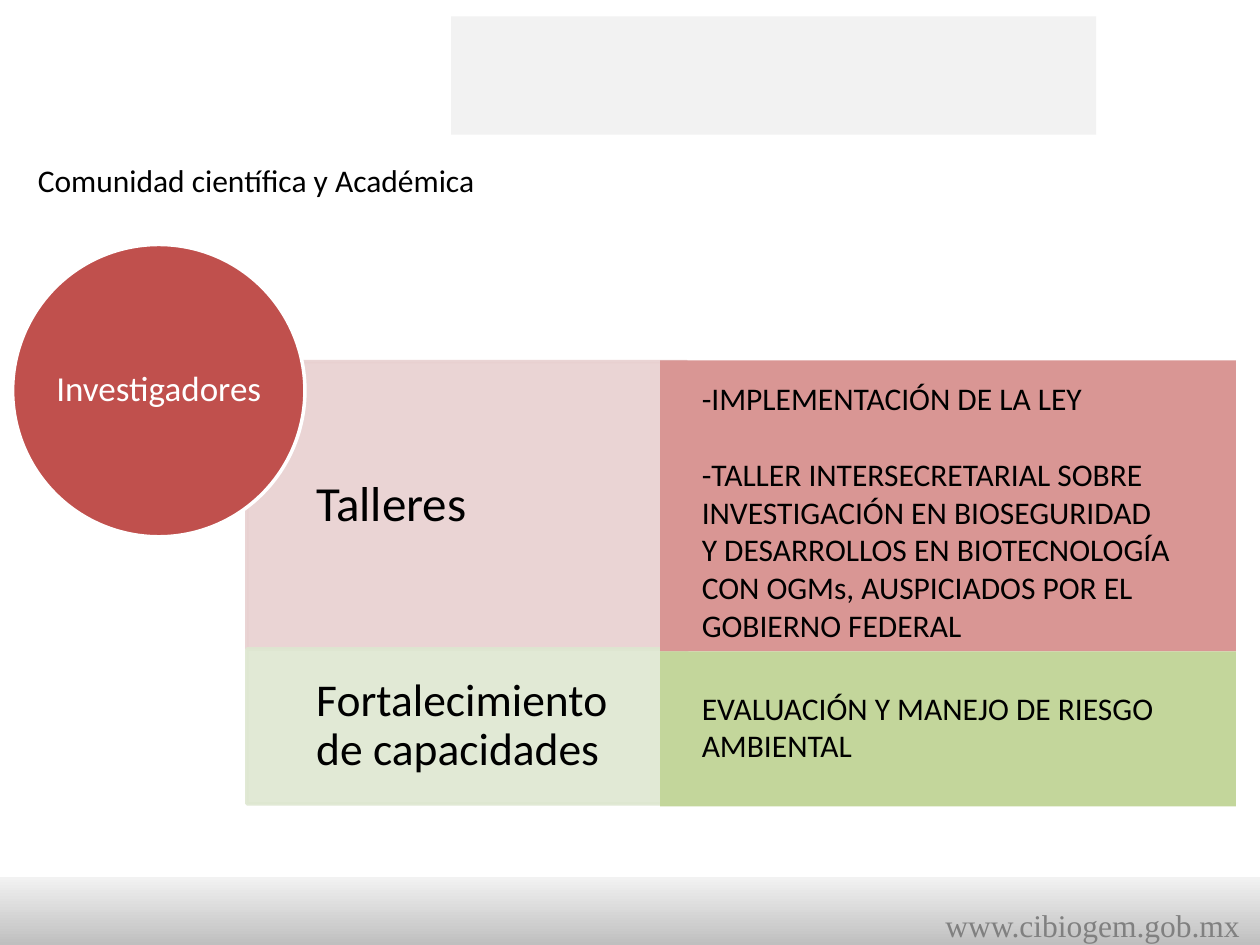
from lxml import etree
from pptx import Presentation
from pptx.dml.color import RGBColor
from pptx.enum import shapes, text
from pptx.oxml import ns
from pptx.util import Inches, Pt

COLORS = {
    "black": "000000", "white": "FFFFFF", "grey": "808080",
    "band": "F2F2F2", "band_dark": "BFBFBF",
    "red": "C0504D", "red_mid": "D99694", "red_pale": "E8D0D0",
    "green_mid": "C3D69B", "green_pale": "DEE7D1",
}
RECT, OVAL = shapes.MSO_SHAPE.RECTANGLE, shapes.MSO_SHAPE.OVAL
TOP, MIDDLE = text.MSO_ANCHOR.TOP, text.MSO_ANCHOR.MIDDLE
LEFT, CENTER, RIGHT = text.PP_ALIGN.LEFT, text.PP_ALIGN.CENTER, text.PP_ALIGN.RIGHT


def rgb(name):
    return RGBColor.from_string(COLORS[name])


def write(shape, *lines, size=18, color="black", font="Calibri", align=LEFT,
          anchor=MIDDLE, margins=(0.1, 0.05, 0.1, 0.05), spacing=1, gap=0, wrap=True):
    """Fill a shape with paragraphs; margins are left, top, right, bottom in inches."""
    frame = shape.text_frame
    frame.auto_size = text.MSO_AUTO_SIZE.NONE
    frame.word_wrap = wrap
    frame.vertical_anchor = anchor
    (frame.margin_left, frame.margin_top,
     frame.margin_right, frame.margin_bottom) = map(Inches, margins)
    for i, line in enumerate(lines):
        paragraph = frame.add_paragraph() if i else frame.paragraphs[0]
        paragraph.alignment = align
        paragraph.line_spacing = spacing
        paragraph.space_before = Pt(gap if i else 0)
        run = paragraph.add_run()
        run.text = line
        run.font.size, run.font.name = Pt(size), font
        run.font.color.rgb = rgb(color)


def add_panel(slide, box, fill, kind=RECT, line=None, opacity=100):
    panel = slide.shapes.add_shape(kind, *map(Inches, box))
    panel.shadow.inherit = False
    panel.fill.solid()
    panel.fill.fore_color.rgb = rgb(fill)
    if line:
        panel.line.color.rgb = rgb(line)
        panel.line.width = Pt(2)
    else:
        panel.line.fill.background()
    if opacity < 100:
        for color in panel._element.spPr.iter(ns.qn("a:srgbClr")):
            etree.SubElement(color, ns.qn("a:alpha"), val=str(opacity * 1000))
    return panel


def add_heading(slide, box, heading):
    title = slide.shapes.title
    title.left, title.top, title.width, title.height = map(Inches, box)
    write(title, heading)


def add_footer(slide, box, address):
    left, top, width, height = box
    band = add_panel(slide, box, "band")
    band.fill.gradient()
    band.fill.gradient_angle = 90
    for stop, color, position in zip(band.fill.gradient_stops, ("band_dark", "band"), (0, 1)):
        stop.color.rgb, stop.position = rgb(color), position
    address_box = slide.shapes.add_textbox(
        *map(Inches, (left + width - 2.64, top + 0.18, 2.58, 0.4)))
    write(address_box, address, font="Times New Roman", color="grey",
          align=RIGHT, anchor=TOP, wrap=False)


def add_topics(slide, box, topics):
    """Stack the pale topic cells; each topic is (name, size, height, fill)."""
    left, top, width = box
    for name, size, height, fill in topics:
        cell = add_panel(slide, (left, top, width, height), fill, line=fill, opacity=90)
        write(cell, name, size=size, spacing=0.9, margins=(0.55, 0.2, 0.2, 0.2))
        top += height


def add_details(slide, box, details):
    """Stack the detail cells; each detail is (lines, height, fill, text format)."""
    left, top, width = box
    for lines, height, fill, layout in details:
        cell = add_panel(slide, (left, top, width, height), fill)
        write(cell, *lines, **layout)
        top += height


def add_audience(slide, box, name):
    circle = add_panel(slide, box, "red", kind=OVAL, line="white")
    write(circle, name, size=20, color="white", align=CENTER,
          spacing=0.9, margins=(0, 0, 0, 0))


def main():
    prs = Presentation()
    prs.slide_width, prs.slide_height = Inches(10), Inches(7.5)
    slide = prs.slides.add_slide(prs.slide_layouts[5])

    add_panel(slide, (3.58, 0.13, 5.12, 0.94), "band")
    add_footer(slide, (0, 6.96, 10, 0.54), "www.cibiogem.gob.mx")
    add_heading(slide, (0.2, 1.23, 4.57, 0.4), "Comunidad científica y Académica")
    add_topics(slide, (1.96, 2.87, 3.49), [
        ("Talleres", 28, 2.28, "red_pale"),
        ("Fortalecimiento de capacidades", 26, 1.23, "green_pale"),
    ])
    add_audience(slide, (0.1, 1.94, 2.32, 2.32), "Investigadores")
    add_details(slide, (5.24, 2.86, 4.57), [
        (["-IMPLEMENTACIÓN DE LA LEY",
          "-TALLER INTERSECRETARIAL SOBRE INVESTIGACIÓN EN BIOSEGURIDAD "
          "Y DESARROLLOS EN BIOTECNOLOGÍA CON OGMs, AUSPICIADOS POR EL "
          "GOBIERNO FEDERAL"],
         2.31, "red_mid", dict(anchor=TOP, gap=21.6, margins=(0.33, 0.15, 0.5, 0))),
        (["EVALUACIÓN Y MANEJO DE RIESGO AMBIENTAL"],
         1.23, "green_mid", dict(margins=(0.33, 0, 0, 0.04))),
    ])
    prs.save("out.pptx")


if __name__ == "__main__":
    main()
